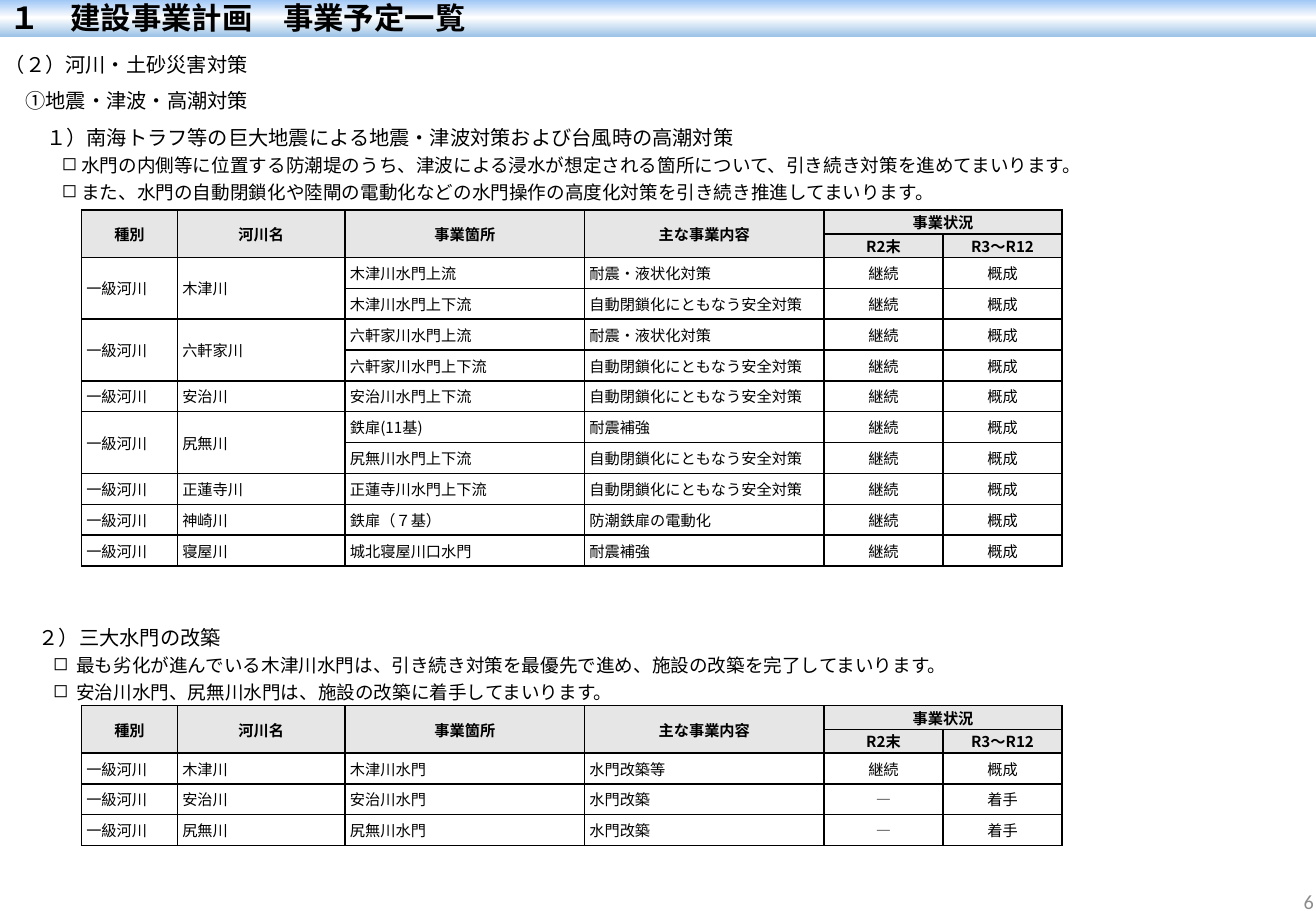
from dataclasses import dataclass

from lxml import etree
from pptx import Presentation
from pptx import util as u
from pptx.dml.color import RGBColor
from pptx.enum import text
from pptx.oxml import parse_xml
from pptx.oxml.ns import nsdecls, qn


@dataclass(frozen=True)
class Theme:
    font: str = "Noto Sans CJK JP"
    number_font: str = "Calibri"
    ink: str = "000000"
    muted: str = "8C8C8C"
    header: str = "E7E6E6"
    bar: tuple = ((0, "9AC3F5"), (50, "FFFFFF"), (100, "9DC3E6"))
    title: int = 18
    heading: int = 12
    body: int = 11
    cell: int = 9


T = Theme()
W, H = u.Inches(10.83), u.Inches(7.5)
LEFT, CENTER, RIGHT = text.PP_ALIGN.LEFT, text.PP_ALIGN.CENTER, text.PP_ALIGN.RIGHT
MIDDLE = text.MSO_ANCHOR.MIDDLE
EM = 0.17  # width of one heading character, inches

COLUMNS = (0.79, 1.38, 1.97, 1.97, 0.98, 0.98)  # relative widths
HEADER_ROW = 2.6  # percent of slide height
RIVER = "一級河川"
SAFETY, QUAKE, STRENGTHEN = "自動閉鎖化にともなう安全対策", "耐震・液状化対策", "耐震補強"
ONGOING = ("継続", "概成")
STARTING = ("―", "着手")

# None joins the cell to the left in the first row, and to the one above elsewhere.
HEADER = [
    ("種別", "河川名", "事業箇所", "主な事業内容", "事業状況", None),
    (None, None, None, None, "R2末", "R3～R12"),
]
FLOOD_WORKS = [
    (RIVER, "木津川", "木津川水門上流", QUAKE, *ONGOING),
    (None, None, "木津川水門上下流", SAFETY, *ONGOING),
    (RIVER, "六軒家川", "六軒家川水門上流", QUAKE, *ONGOING),
    (None, None, "六軒家川水門上下流", SAFETY, *ONGOING),
    (RIVER, "安治川", "安治川水門上下流", SAFETY, *ONGOING),
    (RIVER, "尻無川", "鉄扉(11基)", STRENGTHEN, *ONGOING),
    (None, None, "尻無川水門上下流", SAFETY, *ONGOING),
    (RIVER, "正蓮寺川", "正蓮寺川水門上下流", SAFETY, *ONGOING),
    (RIVER, "神崎川", "鉄扉（７基）", "防潮鉄扉の電動化", *ONGOING),
    (RIVER, "寝屋川", "城北寝屋川口水門", STRENGTHEN, *ONGOING),
]
GATE_WORKS = [
    (RIVER, "木津川", "木津川水門", "水門改築等", *ONGOING),
    (RIVER, "安治川", "安治川水門", "水門改築", *STARTING),
    (RIVER, "尻無川", "尻無川水門", "水門改築", *STARTING),
]


def place(left, top, width, height):
    """Turn percentages of the slide's size into lengths."""
    return tuple(round(share * side / 100)
                 for share, side in zip((left, top, width, height), (W, H, W, H)))


def write(p, words, size=T.body, color=T.ink, font=T.font, bold=False,
          align=LEFT, line=None, margin=0, indent=0, bullet=None):
    pPr = p._p.get_or_add_pPr()
    pPr.set("marL", str(u.Inches(margin)))
    pPr.set("indent", str(u.Inches(indent)))
    if bullet:
        etree.SubElement(pPr, qn("a:buChar")).set("char", bullet)
    p.alignment = align
    if line:
        p.line_spacing = line
    r = p.add_run()
    r.text = words
    r.font.size, r.font.bold, r.font.name = u.Pt(size), bold, font
    r.font.color.rgb = RGBColor.from_string(color)
    latin = r._r.rPr.find(qn("a:latin"))
    latin.addnext(parse_xml(f'<a:ea {nsdecls("a")} typeface="{font}"/>'))


def set_margins(box, side, end):
    box.margin_left = box.margin_right = u.Inches(side)
    box.margin_top = box.margin_bottom = u.Inches(end)


def add_title(slide, words):
    sp = slide.shapes.title
    sp.left, sp.top, sp.width, sp.height = place(0, -0.13, 100, 4.13)
    stops = "".join(f'<a:gs pos="{pos * 1000}"><a:srgbClr val="{color}"/></a:gs>'
                    for pos, color in T.bar)
    sp._element.spPr.append(parse_xml(
        f'<a:gradFill {nsdecls("a")} rotWithShape="1"><a:gsLst>{stops}</a:gsLst>'
        '<a:lin ang="5400000" scaled="0"/></a:gradFill>'))
    tf = sp.text_frame
    tf.auto_size, tf.word_wrap = text.MSO_AUTO_SIZE.NONE, True
    tf.vertical_anchor = MIDDLE
    set_margins(tf, 0.08, 0.04)
    write(tf.paragraphs[0], words, size=T.title, bold=True)


def add_text(slide, box, paragraphs, side=0.1, end=0.05, anchor=text.MSO_ANCHOR.TOP):
    """Add a text box; each paragraph is its words and its format."""
    tf = slide.shapes.add_textbox(*place(*box)).text_frame
    tf.word_wrap, tf.vertical_anchor = True, anchor
    set_margins(tf, side, end)
    for i, (words, style) in enumerate(paragraphs):
        write(tf.add_paragraph() if i else tf.paragraphs[0], words, **style)


def heading(margin=0, line=1.5):
    return dict(size=T.heading, margin=margin, line=line)


def bullet(margin, indent):
    return dict(margin=margin, indent=indent, line=1.2, bullet="◻")


def add_borders(cell):
    tcPr = cell._tc.get_or_add_tcPr()
    for side in "LRTB":
        tcPr.append(parse_xml(
            f'<a:ln{side} {nsdecls("a")} w="{u.Pt(1)}"><a:solidFill>'
            f'<a:srgbClr val="{T.ink}"/></a:solidFill></a:ln{side}>'))


def add_works_table(slide, top, height, works):
    rows = HEADER + works
    box = place(6.19, top, 74.52, height)
    table = slide.shapes.add_table(len(rows), len(COLUMNS), *box).table
    table.first_row = table.horz_banding = False
    for column, share in zip(table.columns, COLUMNS):
        column.width = round(box[2] * share / sum(COLUMNS))
    header_height = round(H * HEADER_ROW / 100)
    work_height = (box[3] - len(HEADER) * header_height) // len(works)
    for i, row in enumerate(rows):
        is_header = i < len(HEADER)
        table.rows[i].height = header_height if is_header else work_height
        for j, words in enumerate(row):
            cell = table.cell(i, j)
            centred = is_header or j >= 4
            set_margins(cell, 0 if centred else 0.04, 0)
            cell.vertical_anchor = MIDDLE
            add_borders(cell)
            if is_header:
                cell.fill.solid()
                cell.fill.fore_color.rgb = RGBColor.from_string(T.header)
            else:
                cell.fill.background()
            if words is None:
                joined = table.cell(i - 1, j) if i else table.cell(i, j - 1)
                joined.merge(cell)
            else:
                write(cell.text_frame.paragraphs[0], words, size=T.cell,
                      bold=is_header, align=CENTER if centred else LEFT)


def main():
    prs = Presentation()
    prs.slide_width, prs.slide_height = W, H
    slide = prs.slides.add_slide(prs.slide_layouts.get_by_name("Title Only"))

    add_title(slide, "１　建設事業計画　事業予定一覧")
    add_text(slide, (78.21, 96.27, 22.53, 5.33), [
        ("6", dict(size=T.heading, color=T.muted, font=T.number_font, align=RIGHT)),
    ], anchor=MIDDLE)

    flood_item = bullet(0.63, -0.16)
    add_text(slide, (0, 5.2, 96.86, 18.27), [
        ("（２）河川・土砂災害対策", heading(line=1)),
        ("①地震・津波・高潮対策", heading(EM)),
        ("１）南海トラフ等の巨大地震による地震・津波対策および台風時の高潮対策", heading(2 * EM)),
        ("水門の内側等に位置する防潮堤のうち、津波による浸水が想定される箇所について、"
         "引き続き対策を進めてまいります。", flood_item),
        ("また、水門の自動閉鎖化や陸閘の電動化などの水門操作の高度化対策を"
         "引き続き推進してまいります。", flood_item),
    ], side=0.04, end=0.04)
    add_works_table(slide, 23.07, 39.07, FLOOD_WORKS)

    gate_item = bullet(0.31, -0.19)
    add_text(slide, (2.03, 66.67, 95.94, 11.33), [
        ("２）三大水門の改築", heading()),
        ("最も劣化が進んでいる木津川水門は、引き続き対策を最優先で進め、"
         "施設の改築を完了してまいります。", gate_item),
        ("安治川水門、尻無川水門は、施設の改築に着手してまいります。", gate_item),
    ])
    add_works_table(slide, 77.47, 15.33, GATE_WORKS)

    prs.save("out.pptx")


if __name__ == "__main__":
    main()
